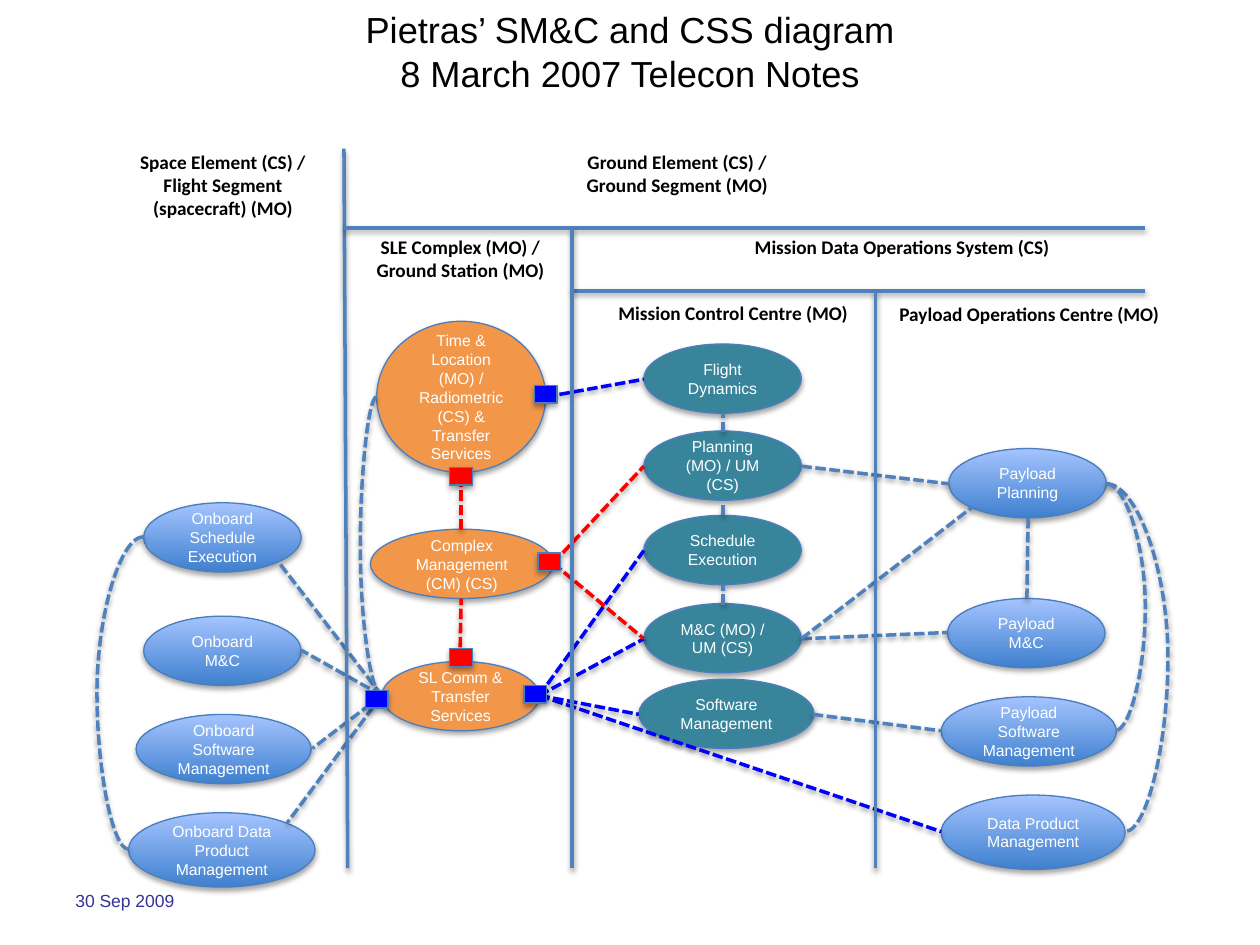
from lxml import etree
from pptx import Presentation
from pptx import util as u
from pptx.dml.color import RGBColor
from pptx.enum import dml, shapes, text
from pptx.oxml import ns

BLACK = RGBColor(0x00, 0x00, 0x00)
WHITE = RGBColor(0xFF, 0xFF, 0xFF)
NAVY = RGBColor(0x33, 0x33, 0x99)
DEEP = RGBColor(0x3F, 0x80, 0xCE)
PALE = RGBColor(0xA4, 0xC4, 0xFF)
EDGE = RGBColor(0x4B, 0x7E, 0xBC)
STEEL = RGBColor(0x4F, 0x81, 0xBD)
ORANGE = RGBColor(0xF2, 0x97, 0x4A)
TEAL = RGBColor(0x38, 0x85, 0x9B)
RED = RGBColor(0xFF, 0x00, 0x00)
BLUE = RGBColor(0x00, 0x00, 0xFF)

OVAL = shapes.MSO_SHAPE.OVAL
RECT = shapes.MSO_SHAPE.RECTANGLE
MID = text.MSO_ANCHOR.MIDDLE
MAIN = 1.25, 0.55
WIDE = 1.39, 0.55
PORT = 0.18, 0.14


def inch(*nums):
    return [u.Inches(n) for n in nums]


def shade(props, dist, alpha):
    glow = props.find(ns.qn("a:effectLst"))
    if glow is None:
        glow = etree.SubElement(props, ns.qn("a:effectLst"))
    drop = etree.SubElement(glow, ns.qn("a:outerShdw"), blurRad=str(u.Pt(3.1)),
                            dist=str(u.Pt(dist)), dir="5400000", rotWithShape="0")
    tint = etree.SubElement(drop, ns.qn("a:srgbClr"), val=str(BLACK))
    etree.SubElement(tint, ns.qn("a:alpha"), val=str(alpha * 1000))


def write(frame, words, size, font, color, bold=False, align=text.PP_ALIGN.CENTER):
    frame.word_wrap = True
    for i, line in enumerate(words.split("\n")):
        para = frame.add_paragraph() if i else frame.paragraphs[0]
        para.alignment = align
        run = para.add_run()
        run.text = line
        run.font.size = u.Pt(size)
        run.font.name = font
        run.font.bold = bold
        run.font.color.rgb = color


def node(slide, kind, box, fill, words=""):
    shape = slide.shapes.add_shape(kind, *inch(*box))
    if fill is None:
        shape.fill.gradient()
        shape.fill.gradient_angle = 90
        for stop, color in zip(shape.fill.gradient_stops, (DEEP, PALE)):
            stop.color.rgb = color
    else:
        shape.fill.solid()
        shape.fill.fore_color.rgb = fill
    shape.line.color.rgb = EDGE
    shape.line.width = u.Pt(0.75)
    shape.shadow.inherit = False
    shade(shape.element.spPr, 1.8, 35)
    if words:
        shape.text_frame.vertical_anchor = MID
        write(shape.text_frame, words, 9, "Arial", WHITE)


def link(slide, start, end, color=STEEL, dash=True, bend=None):
    kinds = shapes.MSO_CONNECTOR
    kind = kinds.STRAIGHT if bend is None else kinds.CURVE
    line = slide.shapes.add_connector(kind, *inch(*start, *end))
    line.line.color.rgb = color
    line.line.width = u.Pt(2)
    if dash:
        line.line.dash_style = dml.MSO_LINE.SQUARE_DOT
    props = line.element.spPr
    shade(props, 1.6, 38)
    if bend is not None:
        geom = props.find(ns.qn("a:prstGeom"))
        guide = geom.find(ns.qn("a:avLst"))
        if guide is None:
            guide = etree.SubElement(geom, ns.qn("a:avLst"))
        ratio = round((bend - start[0]) / (end[0] - start[0]) * 100000)
        etree.SubElement(guide, ns.qn("a:gd"), name="adj1", fmla=f"val {ratio}")


def head(slide, box):
    title = slide.shapes.title
    title.left, title.top, title.width, title.height = inch(*box)
    frame = title.text_frame
    frame.vertical_anchor = MID
    frame.auto_size = text.MSO_AUTO_SIZE.NONE
    write(frame, "Pietras’ SM&C and CSS diagram\n8 March 2007 Telecon Notes",
          20.7, "Arial", BLACK)
    for para in frame.paragraphs:
        para.space_before = u.Pt(0)


def foot(slide, box):
    frame = slide.shapes.add_textbox(*inch(*box)).text_frame
    frame.vertical_anchor = MID
    write(frame, "30 Sep 2009", 10, "Arial", NAVY, align=text.PP_ALIGN.LEFT)


def lane(slide, box, fill, items):
    left, top = box
    for x, y, size, words in items:
        node(slide, OVAL, (left + x, top + y, *size), fill, words)


def web(slide, box):
    left, top = box

    def fan(hub, ends, color=STEEL):
        for x, y in ends:
            link(slide, (left + hub[0], top + hub[1]), (left + x, top + y), color)

    fan((8.16, 4.11), [(8.15, 4.75)])
    fan((6.36, 5.07), [(7.52, 5.02), (7.71, 4.03)])
    fan((6.45, 5.67), [(7.47, 5.8)])
    fan((6.36, 3.7), [(7.53, 3.84)])
    fan((3.03, 5.52), [(2.28, 6.53), (2.48, 5.94), (2.39, 5.16), (2.21, 4.46)])
    fan((4.28, 5.52), [(7.47, 6.6), (5.07, 5.67), (5.11, 5.07), (5.11, 4.37)], BLUE)
    fan((4.33, 3.15), [(5.11, 3.01)], BLUE)
    fan((4.39, 4.47), [(5.11, 3.7), (5.11, 5.07)], RED)
    fan((3.66, 4.2), [(3.66, 3.75)], RED)
    fan((3.65, 5.25), [(3.66, 4.75)], RED)
    for low, high in [(3.43, 3.28), (4.09, 3.98), (4.8, 4.64)]:
        fan((5.74, low), [(5.74, high)])
    for x, y, to, end, bend in [(1.14, 4.26, 1.02, 6.74, 0.77),
                                (8.78, 3.84, 8.93, 6.6, 9.27),
                                (8.78, 3.84, 8.85, 5.8, 9.09),
                                (2.99, 3.15, 3.03, 5.52, 2.86)]:
        link(slide, (left + x, top + y), (left + to, top + end), bend=left + bend)


def grid(slide, box):
    left, top, wide, high = box
    right, base = left + wide, top + high
    first, second = top + 0.63, top + 1.13
    mid, last = left + 1.81, left + 4.22
    for start, end in [((left, top), (left + 0.03, base)),
                       ((left, first), (right, first)),
                       ((mid, second), (right, second)),
                       ((mid, first), (mid, base)),
                       ((last, second), (last, base))]:
        link(slide, start, end, dash=False)


def names(slide, box):
    left, top = box
    for x, y, wide, high, words in [
        (0, 0, 1.6, 0.66, "Space Element (CS) /\nFlight Segment (spacecraft) (MO)"),
        (3.47, 0, 1.87, 0.47, "Ground Element (CS) /\nGround Segment (MO)"),
        (4.62, 0.68, 3.14, 0.29, "Mission Data Operations System (CS)"),
        (5.63, 1.21, 3.14, 0.29, "Payload Operations Centre (MO)"),
        (3.28, 1.2, 3.14, 0.29, "Mission Control Centre (MO)"),
        (1.87, 0.68, 1.63, 0.47, "SLE Complex (MO) /\nGround Station (MO)"),
    ]:
        label = slide.shapes.add_textbox(*inch(left + x, top + y, wide, high))
        label.text_frame.auto_size = text.MSO_AUTO_SIZE.SHAPE_TO_FIT_TEXT
        write(label.text_frame, words, 11, "Calibri", BLACK, bold=True)


def ports(slide, box):
    left, top = box
    for color, spots in [(RED, [(0.67, 0.65), (1.37, 1.33), (0.67, 2.09)]),
                         (BLUE, [(1.26, 2.38), (1.34, 0), (0, 2.42)])]:
        for x, y in spots:
            node(slide, RECT, (left + x, top + y, *PORT), color)


def main():
    deck = Presentation()
    deck.slide_width, deck.slide_height = inch(10, 7.5)
    slide = deck.slides.add_slide(deck.slide_layouts[5])
    head(slide, (0.5, 0, 9, 0.81))
    lane(slide, (1.02, 3.99), None, [
        (0.06, 1.68, WIDE, "Onboard Software Management"),
        (0, 2.46, (1.48, 0.59), "Onboard Data Product Management"),
        (0.12, 0.9, MAIN, "Onboard\nM&C"),
        (0.12, 0, MAIN, "Onboard\nSchedule\nExecution")])
    lane(slide, (2.94, 2.55), ORANGE, [
        (0, 1.65, (1.45, 0.55), "Complex\nManagement\n(CM) (CS)"),
        (0.09, 2.7, MAIN, "SL Comm & Transfer Services"),
        (0.05, 0, (1.34, 1.2),
         "Time & Location (MO) / Radiometric (CS) & Transfer Services")])
    lane(slide, (5.07, 2.73), TEAL, [
        (0.04, 0, MAIN, "Flight Dynamics"),
        (0.04, 0.69, MAIN, "Planning (MO) / UM (CS)"),
        (0.04, 1.36, MAIN, "Schedule Execution"),
        (0.04, 2.06, MAIN, "M&C (MO) / UM (CS)"),
        (0, 2.66, WIDE, "Software Management")])
    lane(slide, (7.47, 3.56), None, [
        (0, 1.97, WIDE, "Payload Software Management"),
        (0, 2.75, (1.46, 0.59), "Data Product Management"),
        (0.05, 1.19, MAIN, "Payload\nM&C"),
        (0.06, 0, MAIN, "Payload\nPlanning")])
    web(slide, (0, 0))
    grid(slide, (2.73, 1.18, 6.36, 5.71))
    names(slide, (0.97, 1.14))
    ports(slide, (2.9, 3.06))
    foot(slide, (0.5, 6.95, 2.33, 0.4))
    deck.save("out.pptx")


if __name__ == "__main__":
    main()
